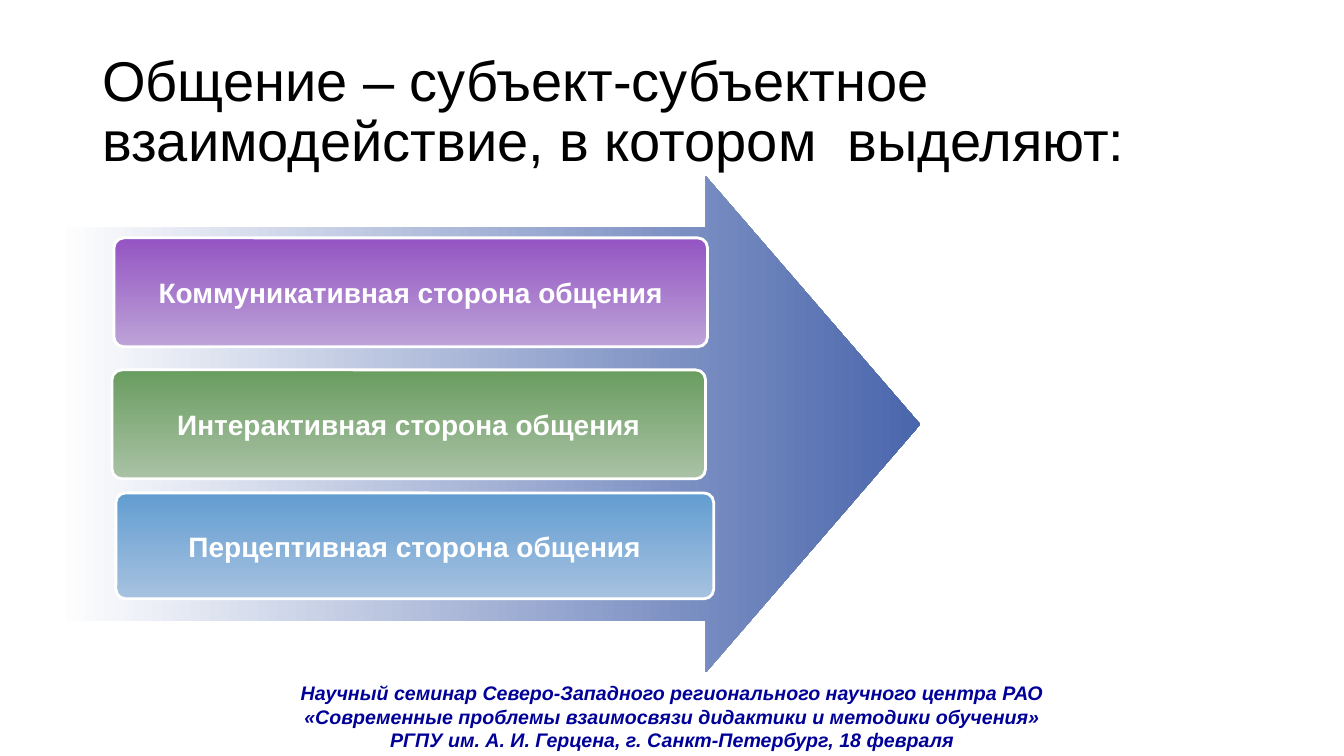
from pptx import Presentation
from pptx import util as u
from pptx.dml.color import RGBColor
from pptx.enum import shapes, text


def color(code):
    return RGBColor.from_string(code)


class Deck:
    face = "Arial"
    white = "FFFFFF"

    def __init__(self, wide, high):
        self.prs = Presentation()
        self.prs.slide_width, self.prs.slide_height = u.Pt(wide), u.Pt(high)
        self.slide = self.prs.slides.add_slide(self.prs.slide_layouts[6])

    def words(self, shape, line, size, ink, bold=False, slant=False,
              align=text.PP_ALIGN.CENTER, space=None, wrap=True,
              anchor=text.MSO_ANCHOR.MIDDLE):
        frame = shape.text_frame
        frame.word_wrap = wrap
        frame.vertical_anchor = anchor
        para = frame.paragraphs[0]
        para.text = line
        para.alignment = align
        para.line_spacing = space
        font = para.font
        font.name, font.size = self.face, u.Pt(size)
        font.bold, font.italic = bold, slant
        font.color.rgb = color(ink)

    def label(self, box, line, size, ink, **style):
        shape = self.slide.shapes.add_textbox(*map(u.Pt, box))
        self.words(shape, line, size, ink, **style)
        return shape

    def block(self, kind, box, adjust, start, end, angle):
        shape = self.slide.shapes.add_shape(kind, *map(u.Pt, box))
        shape.shadow.inherit = False
        for i, value in enumerate(adjust):
            shape.adjustments[i] = value
        shape.fill.gradient()
        shape.fill.gradient_angle = angle
        for stop, code, place in zip(shape.fill.gradient_stops, (start, end), (0, 1)):
            stop.color.rgb = color(code)
            stop.position = place
        shape.line.fill.background()
        return shape

    def arrow(self, box, start, end):
        self.block(shapes.MSO_SHAPE.RIGHT_ARROW, box, (0.793, 0.432), start, end, 0)

    def card(self, box, line, start, end):
        shape = self.block(shapes.MSO_SHAPE.ROUNDED_RECTANGLE, box, (0.091,),
                           start, end, 270)
        shape.line.color.rgb = color(self.white)
        shape.line.width = u.Pt(2)
        self.words(shape, line, 20, self.white, bold=True, wrap=False)


def main():
    deck = Deck(960, 540)

    # Title
    deck.label((66, 28.75, 828, 104.4),
               "Общение – субъект-субъектное взаимодействие, в котором  выделяют:",
               40, "000000", align=text.PP_ALIGN.LEFT, space=0.9)

    # Arrow behind the cards
    deck.arrow((40.3, 126, 617, 354.2), deck.white, "4A66AC")

    # Three sides of communication, lowest first
    cards = [
        ((82.8, 352.1, 427, 75.6), "Перцептивная", "629DD1", "A7C2E0"),
        ((80, 264.2, 424, 77.8), "Интерактивная", "699D5F", "AAC2A6"),
        ((81.4, 169.9, 424, 77.8), "Коммуникативная", "9454C3", "BDA3D7"),
    ]
    for box, side, start, end in cards:
        deck.card(box, f"{side} сторона общения", start, end)

    # Seminar footer
    foot = deck.label((20.2, 483.1, 920, 57.6),
                      "Научный семинар Северо-Западного регионального научного центра РАО\n"
                      "«Современные проблемы взаимосвязи дидактики и методики обучения»\n"
                      "РГПУ им. А. И. Герцена, г. Санкт-Петербург, 18 февраля",
                      14, "000099", bold=True, slant=True, anchor=text.MSO_ANCHOR.TOP)
    foot.text_frame.auto_size = text.MSO_AUTO_SIZE.SHAPE_TO_FIT_TEXT

    deck.prs.save("out.pptx")


if __name__ == "__main__":
    main()
